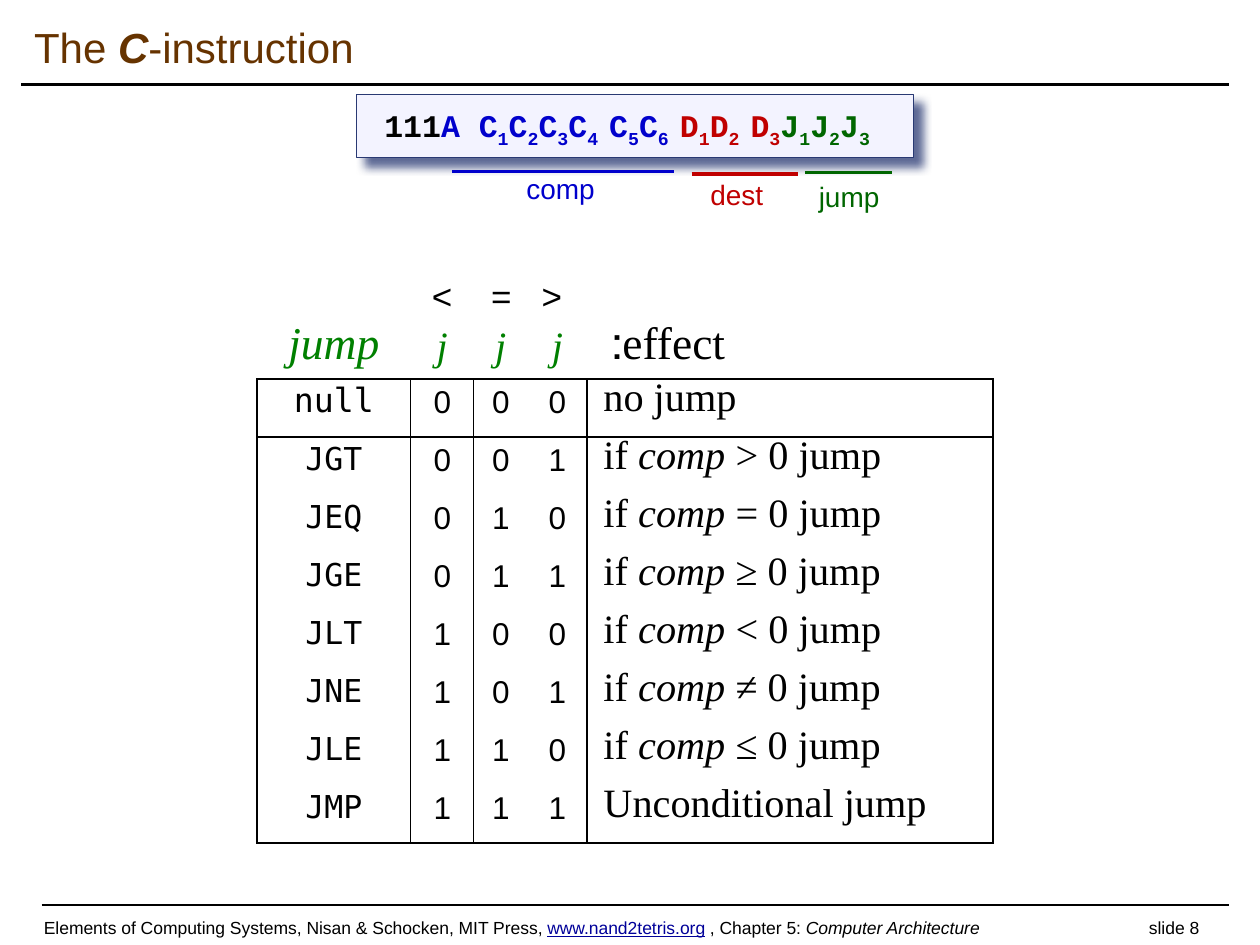
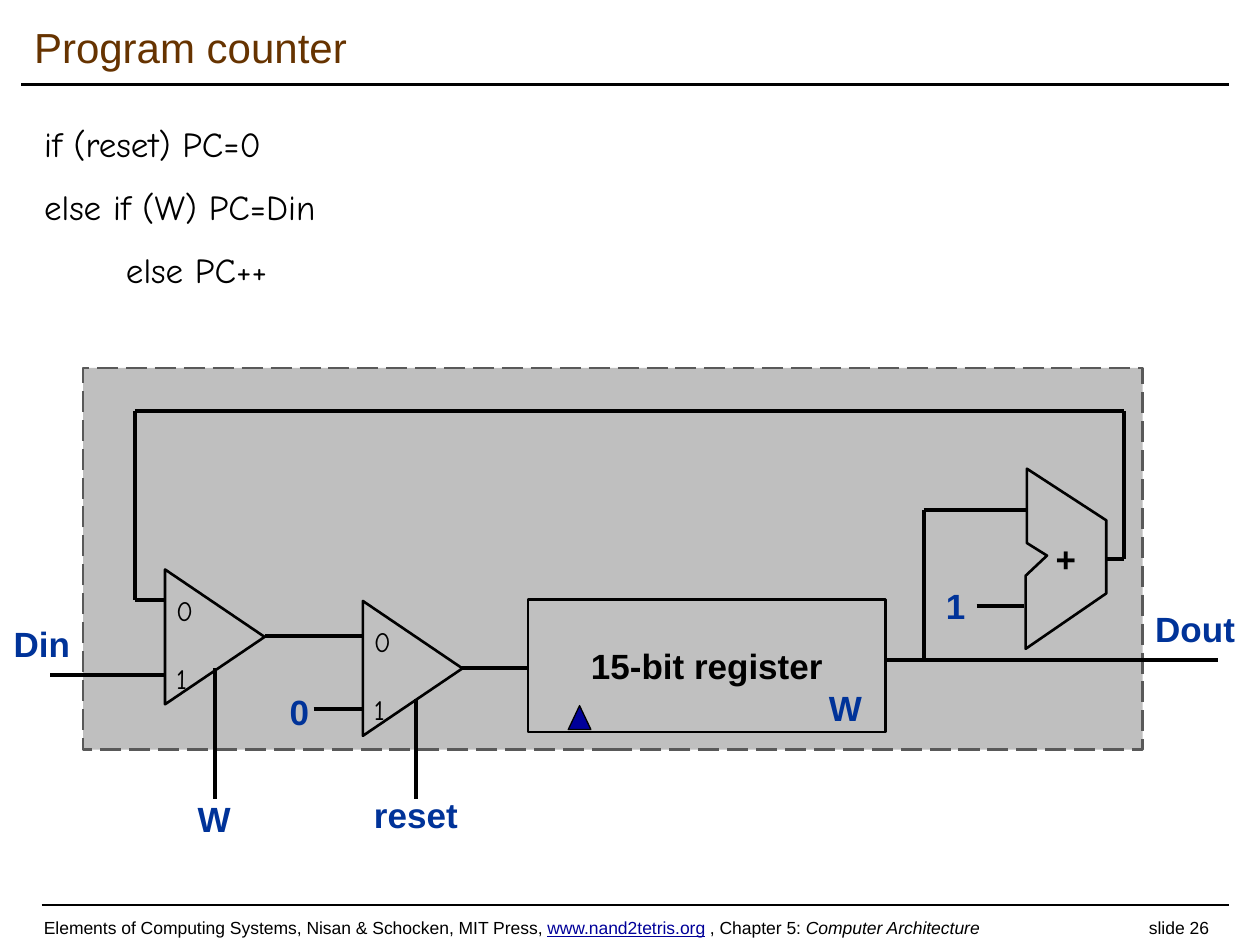
from lxml.etree import SubElement
from pptx import Presentation
from pptx.dml.color import RGBColor
from pptx.enum.dml import MSO_LINE
from pptx.enum.shapes import MSO_CONNECTOR, MSO_SHAPE
from pptx.enum.text import MSO_ANCHOR, MSO_AUTO_SIZE, PP_ALIGN
from pptx.oxml import parse_xml
from pptx.oxml.ns import nsdecls, qn
from pptx.util import Inches, Pt

BLACK = RGBColor(0, 0, 0)
WHITE = RGBColor(255, 255, 255)
BROWN = RGBColor(0x66, 0x33, 0x00)
NAVY = RGBColor(0x00, 0x00, 0x99)
COMP_BLUE = RGBColor(0x00, 0x00, 0xCC)
DEST_RED = RGBColor(0xC0, 0x00, 0x00)
JUMP_GREEN = RGBColor(0x00, 0x66, 0x00)
HEAD_GREEN = RGBColor(0x00, 0x80, 0x00)
SIGNAL_BLUE = RGBColor(0x00, 0x33, 0x99)
BOX_FILL = RGBColor(0xF3, 0xF3, 0xFF)
BOX_EDGE = RGBColor(0x29, 0x39, 0x73)
CHIP_GRAY = RGBColor(0xBF, 0xBF, 0xBF)
PART_GRAY = RGBColor(0xC0, 0xC0, 0xC0)
DASH_GRAY = RGBColor(0x59, 0x59, 0x59)

SANS, SERIF = "Arial", "Times New Roman"
MONO, HAND = "DejaVu Sans Mono", "Comic Neue"

JUMP_ROWS = [
    ("null", "000", "no jump"),
    ("JGT", "001", ">"),
    ("JEQ", "010", "="),
    ("JGE", "011", "≥"),
    ("JLT", "100", "<"),
    ("JNE", "101", "≠"),
    ("JLE", "110", "≤"),
    ("JMP", "111", "Unconditional jump"),
]


def style(font, size=None, color=None, name=None, bold=None, italic=None):
    if size:
        font.size = Pt(size)
    if color is not None:
        font.color.rgb = color
    if name:
        font.name = name
    if bold is not None:
        font.bold = bold
    if italic is not None:
        font.italic = italic


def add_run(paragraph, text, **look):
    run = paragraph.add_run()
    run.text = text
    style(run.font, **look)
    return run


def set_tabs(paragraph, *stops):
    tabs = SubElement(paragraph._p.get_or_add_pPr(), qn("a:tabLst"))
    for stop in stops:
        SubElement(tabs, qn("a:tab"), pos=str(Inches(stop)), algn="l")


def place(shape, left, top, width, height):
    shape.left, shape.top = Inches(left), Inches(top)
    shape.width, shape.height = Inches(width), Inches(height)


def add_line(slide, x1, y1, x2, y2, color=BLACK, width=2.25):
    line = slide.shapes.add_connector(
        MSO_CONNECTOR.STRAIGHT, Inches(x1), Inches(y1), Inches(x2), Inches(y2))
    line.line.color.rgb = color
    line.line.width = Pt(width)
    SubElement(line._element.spPr, qn("a:effectLst"))


def add_wire(slide, *points):
    for start, end in zip(points, points[1:]):
        add_line(slide, *start, *end)


def paint(shape, fill, edge=BLACK, width=1.5):
    shape.shadow.inherit = False
    shape.fill.solid()
    shape.fill.fore_color.rgb = fill
    shape.line.color.rgb = edge
    shape.line.width = Pt(width)
    return shape


def add_part(slide, kind, left, top, width, height, fill, edge=BLACK, line=1.5):
    part = slide.shapes.add_shape(
        kind, Inches(left), Inches(top), Inches(width), Inches(height))
    return paint(part, fill, edge, line)


def add_text(slide, text, left, top, width, height, wrap=False, **look):
    box = slide.shapes.add_textbox(
        Inches(left), Inches(top), Inches(width), Inches(height))
    box.text_frame.word_wrap = wrap
    paragraph = box.text_frame.paragraphs[0]
    if text:
        paragraph.text = text
    style(paragraph.font, **look)
    return box.text_frame


def add_signal(slide, text, left, top, width, color=SIGNAL_BLUE):
    add_text(slide, text, left, top, width, 0.44,
             size=20, color=color, name=SANS, bold=True)


def add_slide(prs, layout, title_parts, number):
    """Start a slide with its title, the two rules and the footer."""
    slide = prs.slides.add_slide(prs.slide_layouts[layout])
    title = slide.shapes.title
    place(title, 0.17, 0.08, 9.58, 0.58)
    title.text_frame.vertical_anchor = MSO_ANCHOR.MIDDLE
    title.text_frame.auto_size = MSO_AUTO_SIZE.NONE
    heading = title.text_frame.paragraphs[0]
    heading.alignment = PP_ALIGN.LEFT
    style(heading.font, 24, BROWN, SANS)
    for text, emphasis in title_parts:
        add_run(heading, text, bold=emphasis, italic=emphasis)

    add_line(slide, 0.17, 0.67, 9.75, 0.67, width=2)
    add_line(slide, 0.33, 7.18, 9.75, 7.18, width=1)
    frame = add_text(slide, "", 0.25, 7.15, 9.5, 0.27, wrap=True)
    place(frame._parent, 0.25, 7.23, 9.5, 0.27)
    frame.vertical_anchor = MSO_ANCHOR.MIDDLE
    footer = frame.paragraphs[0]
    set_tabs(footer, 8.77)
    style(footer.font, 10, BLACK, SANS)
    add_run(footer, "Elements of Computing Systems, Nisan & Schocken, MIT Press, ")
    add_run(footer, "www.nand2tetris.org", color=NAVY).font.underline = True
    add_run(footer, " , Chapter 5: ")
    add_run(footer, "Computer Architecture", italic=True)
    add_run(footer, f"\tslide {number}")
    return slide


def add_instruction_box(slide):
    box = add_part(slide, MSO_SHAPE.RECTANGLE, 2.83, 0.75, 4.42, 0.5,
                   BOX_FILL, BOX_EDGE, 0.75)
    effects = box._element.spPr.find(qn("a:effectLst"))
    effects.append(parse_xml(
        f'<a:outerShdw {nsdecls("a")} blurRad="{Pt(5)}" dist="{Pt(7.1)}" '
        f'dir="2700000" algn="tl" rotWithShape="0"><a:srgbClr val="{BOX_EDGE}">'
        '<a:alpha val="75000"/></a:srgbClr></a:outerShdw>'))
    frame = box.text_frame
    frame.vertical_anchor = MSO_ANCHOR.MIDDLE
    frame.margin_left, frame.margin_right = Inches(0.22), 0
    frame.margin_top = frame.margin_bottom = Inches(0.21)
    bits = frame.paragraphs[0]
    bits.alignment = PP_ALIGN.LEFT
    bits.line_spacing = 0.9
    style(bits.font, 18, BLACK, "Courier New", bold=True)
    add_run(bits, "111")
    add_run(bits, "A ", color=COMP_BLUE)
    for letter, color, indexes in [
            ("C", COMP_BLUE, ["1", "2", "3", "4 ", "5", "6 "]),
            ("D", DEST_RED, ["1", "2 ", "3"]),
            ("J", JUMP_GREEN, ["1", "2", "3"])]:
        for index in indexes:
            add_run(bits, letter, color=color)
            subscript = add_run(bits, index, color=color)
            subscript._r.get_or_add_rPr().set("baseline", "-25000")


def set_borders(cell, **sides):
    """Give each side (L, R, T, B) a thin black line, or none."""
    properties = cell._tc.get_or_add_tcPr()
    for position, (side, visible) in enumerate(sides.items()):
        paint_xml = ('<a:solidFill><a:srgbClr val="000000"/></a:solidFill>'
                     if visible else "<a:noFill/>")
        properties.insert(position, parse_xml(
            f'<a:ln{side} {nsdecls("a")} w="{Pt(1)}">{paint_xml}</a:ln{side}>'))


def fill_cell(cell, parts, spacing, left=None, **look):
    """Write (text, italic) parts; centred unless a left margin is given."""
    paragraph = cell.text_frame.paragraphs[0]
    paragraph.alignment = PP_ALIGN.CENTER if left is None else PP_ALIGN.LEFT
    paragraph.line_spacing = Pt(spacing)
    cell.margin_left, cell.margin_right = Inches(left or 0), 0
    style(paragraph.font, **look)
    for text, italic in parts:
        add_run(paragraph, text, italic=italic, **look)
    return paragraph


def add_jump_table(slide):
    widths = [1.22, 0.5, 0.43, 0.47, 3.22]
    heights = [0.68] + [0.46] * len(JUMP_ROWS)
    table = slide.shapes.add_table(
        len(heights), len(widths), Inches(2.04), Inches(2.33),
        Inches(sum(widths)), Inches(sum(heights))).table
    table.first_row = table.horz_banding = False
    for column, width in zip(table.columns, widths):
        column.width = Inches(width)
    for row, height in zip(table.rows, heights):
        row.height = Inches(height)

    upright_rules, level_rules = {0, 1, 2, 4, 5}, {1, 2, len(heights)}
    for r in range(len(heights)):
        for c in range(len(widths)):
            cell = table.cell(r, c)
            cell.vertical_anchor = MSO_ANCHOR.MIDDLE if r else MSO_ANCHOR.BOTTOM
            cell.margin_top = cell.margin_bottom = 0 if r else Inches(0.08)
            if r:
                cell.fill.background()
            else:
                cell.fill.solid()
                cell.fill.fore_color.rgb = WHITE
            set_borders(cell, L=r > 0 and c in upright_rules,
                        R=r > 0 and c + 1 in upright_rules,
                        T=r in level_rules, B=r + 1 in level_rules)

    for c, text in enumerate(["jump", "j", "j", "j"]):
        fill_cell(table.cell(0, c), [(text, True)], 13.2,
                  size=23 if c else 26, color=HEAD_GREEN, name=SERIF)
    effect = fill_cell(table.cell(0, 4), [("effect:", False)], 13.2, left=0.19,
                       size=26, color=BLACK, name=SERIF)
    effect._p.get_or_add_pPr().set("rtl", "1")

    for r, (mnemonic, digits, result) in enumerate(JUMP_ROWS, 1):
        fill_cell(table.cell(r, 0), [(mnemonic, False)], 13.8,
                  size=19 if r == 1 else 18, color=BLACK, name=MONO)
        for c, digit in enumerate(digits, 1):
            fill_cell(table.cell(r, c), [(digit, False)], 13.8,
                      size=18, color=BLACK, name=SANS)
        parts = [(result, False)]
        if len(result) == 1:
            parts = [("if ", False), ("comp", True), (f" {result} 0 jump", False)]
        fill_cell(table.cell(r, 4), parts, 13.8, left=0.13,
                  size=23, color=BLACK, name=SERIF)


def add_mux(slide, left, top):
    triangle = add_part(slide, MSO_SHAPE.ISOSCELES_TRIANGLE,
                        left, top, 1.07, 0.79, PART_GRAY)
    triangle.rotation = 90
    look = dict(size=16, color=BLACK, name=HAND)
    inputs = add_text(slide, "0", left + 0.13, top, 0.34, 0.91, **look)
    second = inputs.add_paragraph()
    second.text = "1"
    second.space_before = Pt(19.5)
    style(second.font, **look)


def add_adder(slide):
    outline = [(8.15, 3.72), (8.15, 4.31), (8.31, 4.41), (8.14, 4.57),
               (8.14, 5.15), (8.78, 4.71), (8.78, 4.13)]
    points = [(Inches(x), Inches(y)) for x, y in outline]
    builder = slide.shapes.build_freeform(*points[0])
    builder.add_line_segments(points[1:], close=True)
    paint(builder.convert_to_shape(), PART_GRAY)
    add_signal(slide, "+", 8.28, 4.22, 0.37, BLACK)


def add_register(slide):
    register = add_part(slide, MSO_SHAPE.RECTANGLE, 4.19, 4.76, 2.84, 1.05, PART_GRAY)
    register.text_frame.vertical_anchor = MSO_ANCHOR.MIDDLE
    label = register.text_frame.paragraphs[0]
    label.text = "15-bit register"
    label.alignment = PP_ALIGN.CENTER
    style(label.font, 20, BLACK, SANS, bold=True)
    add_part(slide, MSO_SHAPE.ISOSCELES_TRIANGLE, 4.51, 5.6, 0.18, 0.19,
             NAVY, line=0.75)


def add_code(slide, lines):
    body = slide.placeholders[1]
    place(body, 0.25, 0.92, 9.42, 6.08)
    frame = body.text_frame
    frame.auto_size = MSO_AUTO_SIZE.NONE
    for i, line in enumerate(lines):
        paragraph = frame.add_paragraph() if i else frame.paragraphs[0]
        paragraph.text = line
        properties = paragraph._p.get_or_add_pPr()
        properties.set("marL", "0")
        properties.set("indent", "0")
        SubElement(properties, qn("a:buNone"))
        paragraph.space_before = Pt(12 if i else 0)
        style(paragraph.font, 20, BLACK, HAND)


def build_instruction_slide(prs):
    slide = add_slide(prs, 5, [("The ", None), ("C", True), ("-instruction", None)], 8)
    add_instruction_box(slide)
    for field, color, x1, x2, y, left, top, width in [
            ("comp", COMP_BLUE, 3.59, 5.35, 1.36, 4.08, 1.31, 0.75),
            ("dest", DEST_RED, 5.49, 6.33, 1.38, 5.54, 1.36, 0.63),
            ("jump", JUMP_GREEN, 6.39, 7.08, 1.37, 6.4, 1.38, 0.69)]:
        add_line(slide, x1, y, x2, y, color, 2)
        add_text(slide, field, left, top, width, 0.37, size=16, color=color, name=SANS)
    add_jump_table(slide)
    signs = add_text(slide, "", 3.33, 2.13, 1.23, 0.44, wrap=True).paragraphs[0]
    set_tabs(signs, 0.47, 0.87)
    signs.text = "<\t=\t>"
    style(signs.font, 20, BLACK, SANS)


def build_counter_slide(prs):
    slide = add_slide(prs, 1, [("Program counter", None)], 26)
    add_code(slide, ["if (reset) PC=0", "else if (W) PC=Din", "       else PC++"])
    chip = add_part(slide, MSO_SHAPE.RECTANGLE, 0.66, 2.92, 8.41, 3.03,
                    CHIP_GRAY, DASH_GRAY)
    chip.line.dash_style = MSO_LINE.LONG_DASH
    add_mux(slide, 1.17, 4.66)
    add_mux(slide, 2.74, 4.91)
    add_register(slide)
    add_adder(slide)
    for wire in [
            [(8.78, 4.44), (8.92, 4.44), (8.92, 3.26), (1.07, 3.26),
             (1.07, 4.76), (1.31, 4.76)],
            [(7.33, 5.24), (7.33, 4.05), (8.14, 4.05)],
            [(7.75, 4.81), (8.13, 4.81)],
            [(7.02, 5.24), (9.67, 5.24)],
            [(3.66, 5.3), (4.19, 5.3)],
            [(2.1, 5.05), (2.88, 5.05)],
            [(2.49, 5.63), (2.88, 5.63)],
            [(0.4, 5.36), (1.3, 5.36)],
            [(3.3, 5.55), (3.3, 6.34)],
            [(1.71, 5.3), (1.71, 6.34)]]:
        add_wire(slide, *wire)
    for signal, left, top, width in [
            ("W", 6.48, 5.4, 0.63), ("1", 7.41, 4.59, 0.44), ("0", 2.2, 5.43, 0.44),
            ("reset", 2.87, 6.25, 0.87), ("W", 1.47, 6.28, 0.63),
            ("Din", 0.01, 4.89, 0.66), ("Dout", 9.07, 4.77, 0.84)]:
        add_signal(slide, signal, left, top, width)


def main():
    prs = Presentation()
    prs.slide_width, prs.slide_height = Inches(10), Inches(7.5)
    build_instruction_slide(prs)
    build_counter_slide(prs)
    prs.save("out.pptx")


if __name__ == "__main__":
    main()
